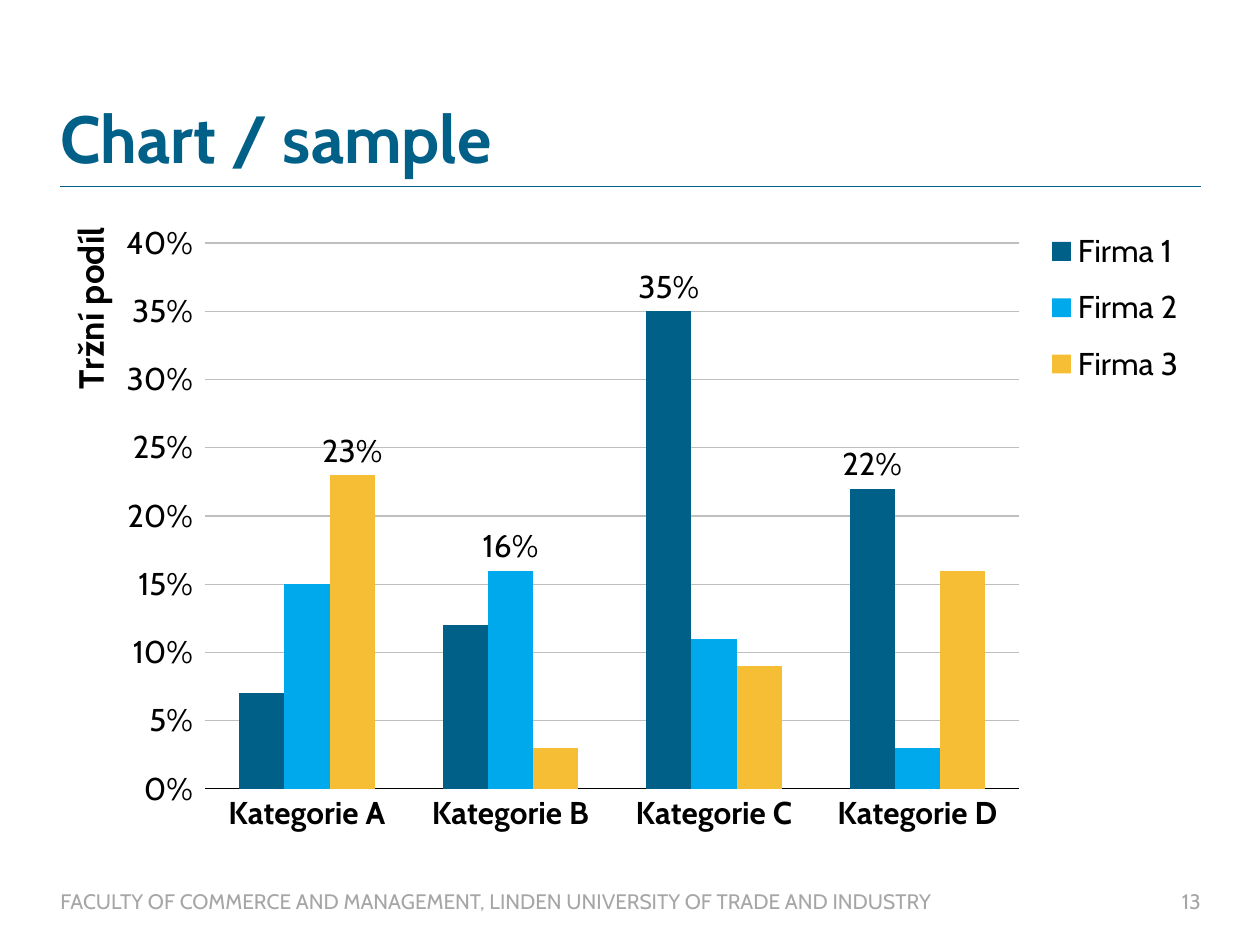
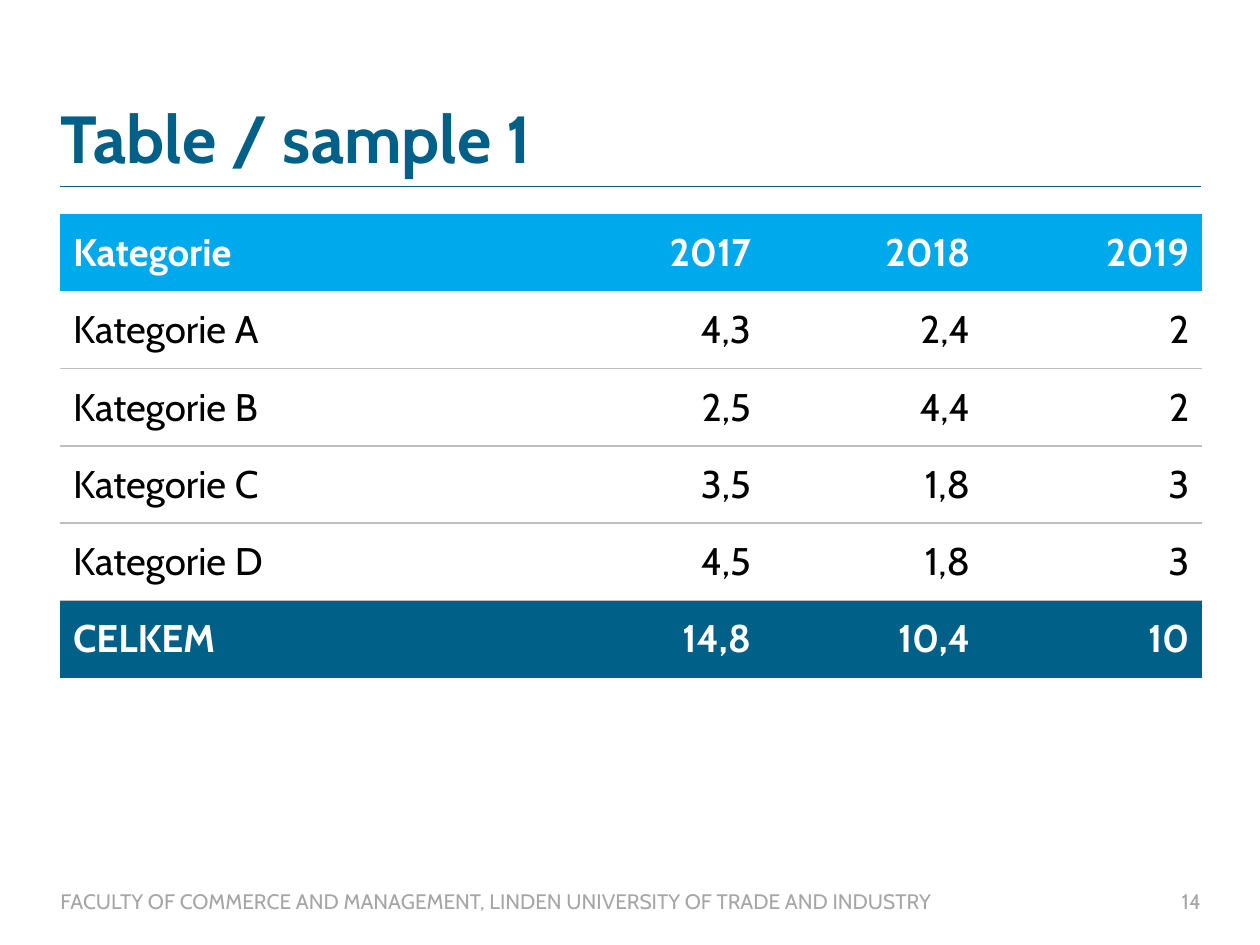
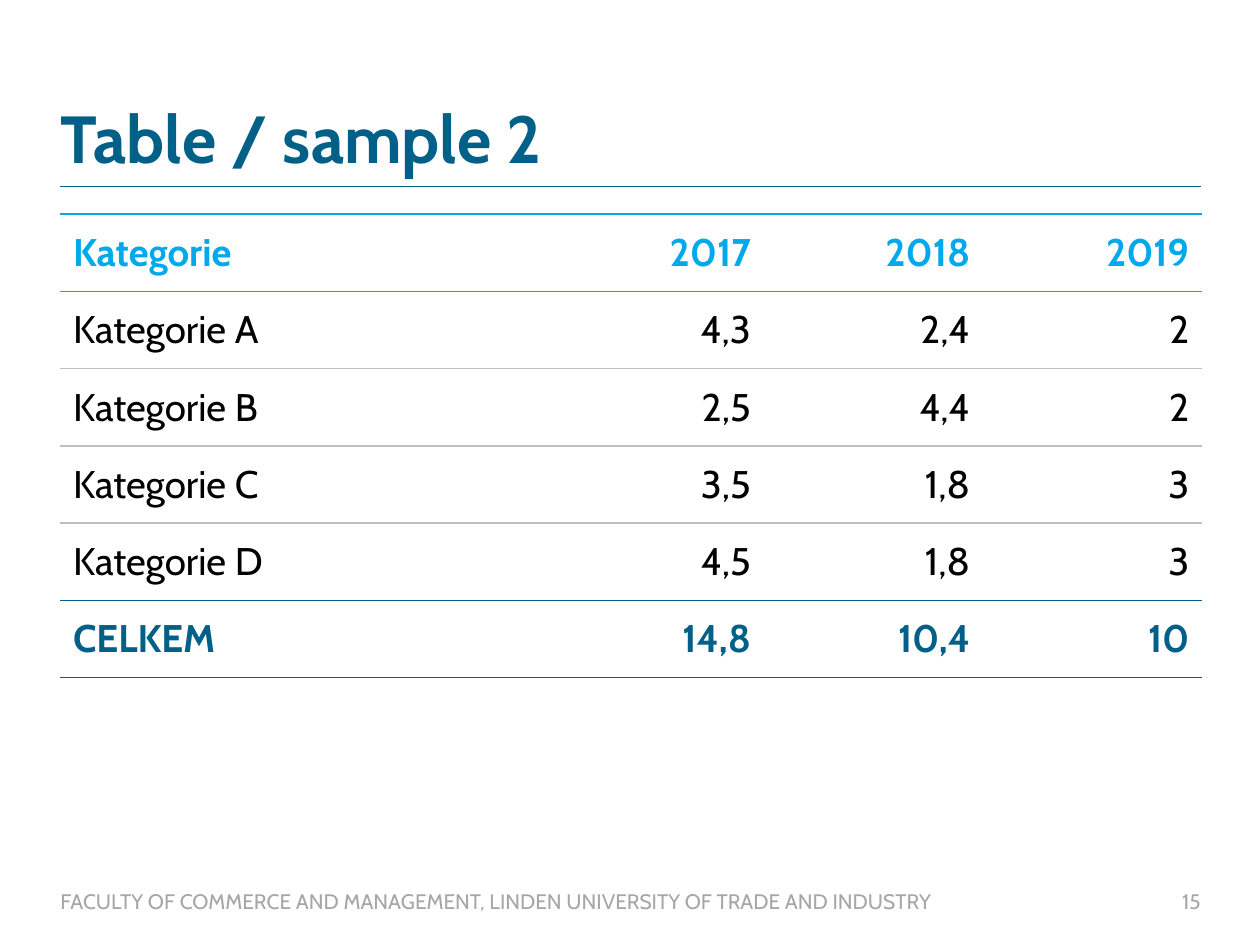
"""Build a chart slide and two table slides with a shared title and footer."""
from lxml import etree
from pptx import Presentation, util as u
from pptx.chart import data
from pptx.dml import color
from pptx.enum import chart as ch, shapes, text
from pptx.oxml import ns

FONT = "Cabin"
HUES = {"sea": "006088", "sky": "00A8EC", "sun": "F5BE34", "rule": "BFBFBF",
        "note": "A6A6A6", "ink": "000000", "white": "FFFFFF"}
RGB = {name: color.RGBColor.from_string(hue) for name, hue in HUES.items()}
LEFT, WIDTH, TOP = 0.48, 9.05, 1.7
FOOT = "FACULTY OF COMMERCE AND MANAGEMENT, LINDEN UNIVERSITY OF TRADE AND INDUSTRY"
ALIGN, ANCHOR = text.PP_ALIGN, text.MSO_ANCHOR


def style(font, size, hue, bold=False):
    font.name, font.size, font.bold = FONT, u.Pt(size), bold
    font.color.rgb = RGB[hue]


def place(node, spot, **dims):
    for old in node.findall(ns.qn("c:layout")):
        node.remove(old)
    frame = etree.Element(ns.qn("c:layout"))
    grid = etree.SubElement(frame, ns.qn("c:manualLayout"))
    if "w" in dims and spot == 0:
        etree.SubElement(grid, ns.qn("c:layoutTarget"), val="inner")
    for key in "xy":
        etree.SubElement(grid, ns.qn(f"c:{key}Mode"), val="edge")
    for key, val in dims.items():
        etree.SubElement(grid, ns.qn(f"c:{key}"), val=str(val))
    node.insert(spot, frame)


deck = Presentation()
deck.slide_width, deck.slide_height = u.Inches(10), u.Inches(7.5)

pages = []
for num, title in enumerate(["Chart / sample", "Table / sample 1", "Table / sample 2"], 13):
    page = deck.slides.add_slide(deck.slide_layouts[6])
    pages.append(page)
    line = page.shapes.add_connector(
        shapes.MSO_CONNECTOR.STRAIGHT, u.Inches(LEFT), u.Inches(1.48),
        u.Inches(LEFT + WIDTH), u.Inches(1.48))
    line.line.color.rgb, line.line.width = RGB["sea"], u.Pt(0.25)
    etree.SubElement(line._element.spPr, ns.qn("a:effectLst"))
    for words, box, size, hue, bold, align, anchor in [
            (title, (LEFT, 0.83, WIDTH, 0.58), 38, "sea", True, ALIGN.LEFT, ANCHOR.BOTTOM),
            (FOOT, (LEFT, 7.05, 7.65, 0.2), 12, "note", False, ALIGN.LEFT, ANCHOR.MIDDLE),
            (str(num), (9.15, 7.05, 0.38, 0.2), 12, "note", False, ALIGN.RIGHT, ANCHOR.MIDDLE)]:
        frame = page.shapes.add_textbox(*map(u.Inches, box)).text_frame
        frame.margin_left = frame.margin_right = frame.margin_top = frame.margin_bottom = 0
        frame.word_wrap, frame.vertical_anchor = True, anchor
        frame.text = words
        para = frame.paragraphs[0]
        para.alignment = align
        if bold:
            para.line_spacing = 0.9
        style(para.runs[0].font, size, hue, bold)

firms = [("Firma 1", "sea", [0.07, 0.12, 0.35, 0.22], [2, 3]),
         ("Firma 2", "sky", [0.15, 0.16, 0.11, 0.03], [1]),
         ("Firma 3", "sun", [0.23, 0.03, 0.09, 0.16], [0])]
kinds = [f"Kategorie {mark}" for mark in "ABCD"]
facts = data.CategoryChartData(number_format="0%")
facts.categories = kinds
for name, hue, vals, shown in firms:
    facts.add_series(name, vals)
chart = pages[0].shapes.add_chart(
    ch.XL_CHART_TYPE.COLUMN_CLUSTERED, u.Inches(0.47), u.Inches(TOP),
    u.Inches(9.06), u.Inches(5.12), facts).chart
chart.has_title = False
style(chart.font, 18, "ink")

plot = chart.plots[0]
plot.gap_width, plot.overlap, plot.vary_by_categories = 150, 0, False
for bars, (name, hue, vals, shown) in zip(plot.series, firms):
    bars.format.fill.solid()
    bars.format.fill.fore_color.rgb = RGB[hue]
    tags = bars.data_labels
    tags.show_value = False
    tags.number_format, tags.number_format_is_linked = "0%", False
    for spot in shown:
        tag = bars.points[spot].data_label
        tag.position = ch.XL_LABEL_POSITION.OUTSIDE_END
        style(tag.font, 18, "ink")

base = chart.category_axis
base.major_tick_mark = ch.XL_TICK_MARK.NONE
base.format.line.color.rgb, base.format.line.width = RGB["ink"], u.Pt(0.5)
style(base.tick_labels.font, 18, "ink", True)

scale = chart.value_axis
scale.minimum_scale, scale.maximum_scale, scale.major_unit = 0, 0.4, 0.05
scale.format.line.fill.background()
grid = scale.major_gridlines.format.line
grid.color.rgb, grid.width = RGB["rule"], u.Pt(0.75)
scale.tick_labels.number_format = "0%"
scale.tick_labels.number_format_is_linked = False
style(scale.tick_labels.font, 18, "ink")
head = scale.axis_title.text_frame
head.text = "Tržní podíl"
style(head.paragraphs[0].runs[0].font, 20, "ink", True)

chart.has_legend = True
chart.legend.position = ch.XL_LEGEND_POSITION.RIGHT
chart.legend.include_in_layout = False
style(chart.legend.font, 18, "ink")

root = chart.element
root.xpath(".//c:valAx/c:title/c:tx/c:rich/a:bodyPr")[0].set("rot", "-5400000")
place(root.xpath(".//c:plotArea")[0], 0, x=0.128, y=0.045, w=0.713, h=0.846)
place(root.xpath(".//c:valAx/c:title")[0], 1, x=0, y=0.01)
place(root.xpath(".//c:legend")[0], 1, x=0.86, y=0, w=0.13, h=0.29)

rows = [["Kategorie", "2017", "2018", "2019"],
        [kinds[0], "4,3", "2,4", "2"],
        [kinds[1], "2,5", "4,4", "2"],
        [kinds[2], "3,5", "1,8", "3"],
        [kinds[3], "4,5", "1,8", "3"],
        ["CELKEM", "14,8", "10,4", "10"]]
last = len(rows) - 1
inner = ["rule"] * 3
looks = [({0: "sky", last: "sea"}, {0: "white", last: "white"}, [None, None, *inner, None, None]),
         ({}, {0: "sky", last: "sea"}, ["sky", "sky", *inner, "sea", "sea"])]

for page, (fills, inks, rules) in zip(pages[1:], looks):
    table = page.shapes.add_table(
        len(rows), len(rows[0]), u.Inches(LEFT), u.Inches(TOP),
        u.Inches(WIDTH), u.Inches(3.68)).table
    table.horz_banding = table.first_row = False
    table._tbl.tblPr.find(ns.qn("a:tableStyleId")).text = "{2D5ABB26-0587-4C30-8999-92F81FD0307C}"
    for col, wide in zip(table.columns, [3.84] + [1.74] * 3):
        col.width = u.Inches(wide)
    for r, row in enumerate(rows):
        for c, words in enumerate(row):
            cell = table.cell(r, c)
            cell.text = words
            cell.vertical_anchor = ANCHOR.MIDDLE
            cell.margin_left = cell.margin_right = u.Inches(0.1)
            cell.margin_top = cell.margin_bottom = u.Inches(0.07)
            para = cell.text_frame.paragraphs[0]
            para.alignment = ALIGN.RIGHT if c else ALIGN.LEFT
            style(para.runs[0].font, 22, inks.get(r, "ink"), r in (0, last))
            if r in fills:
                cell.fill.solid()
                cell.fill.fore_color.rgb = RGB[fills[r]]
            else:
                cell.fill.background()
            for side, hue in (("lnB", rules[r + 1]), ("lnT", rules[r])):
                if hue:
                    edge = etree.Element(ns.qn(f"a:{side}"), w=str(u.Pt(1)))
                    paint = etree.SubElement(edge, ns.qn("a:solidFill"))
                    etree.SubElement(paint, ns.qn("a:srgbClr"), val=HUES[hue])
                    cell._tc.get_or_add_tcPr().insert(0, edge)

deck.save("out.pptx")
